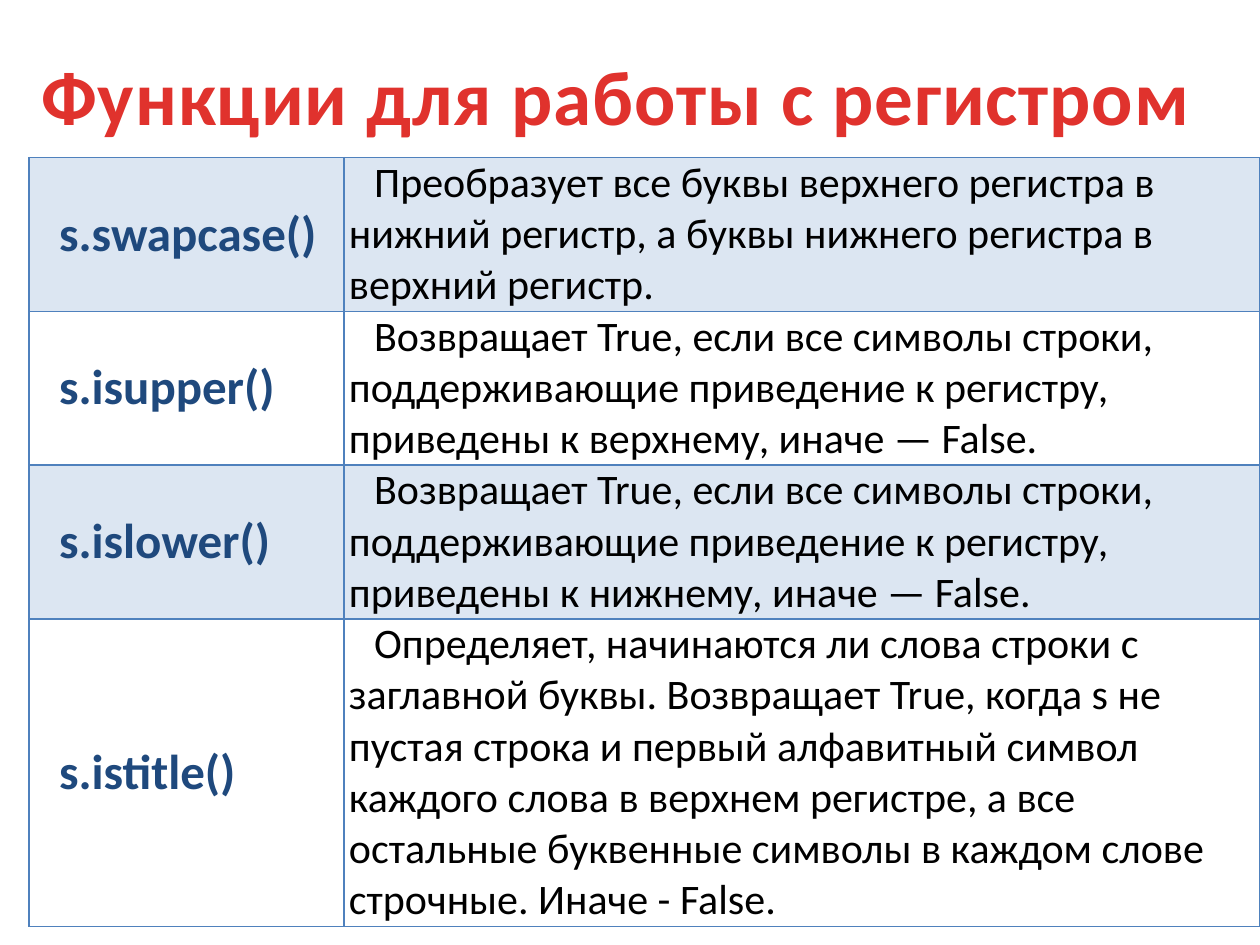
"""Build a slide with a table of Python string case functions."""
from lxml.etree import SubElement
from pptx import Presentation
from pptx.dml.color import RGBColor
from pptx.enum.text import MSO_ANCHOR, MSO_AUTO_SIZE, PP_ALIGN
from pptx.oxml.ns import qn
from pptx.util import Inches, Pt

THEME = {
    "title": {"name": "Calibri", "size": Pt(44), "bold": True, "color": "E0322D"},
    "function": {"name": "Calibri", "size": Pt(28), "bold": True, "color": "1F497D"},
    "meaning": {"name": "Calibri", "size": Pt(24), "bold": False, "color": "000000"},
    "band": "DCE6F2",
    "border": "4F81BD",
}
LEFT, TABLE_TOP = 0.023, 1 / 6
COLUMN_SHARES = (0.25, 1 - LEFT - 0.25)
ROW_SHARE = 0.16
FUNCTIONS = [
    ("s.swapcase()", "Преобразует все буквы верхнего регистра в нижний регистр, "
     "а буквы нижнего регистра в верхний регистр.", 1),
    ("s.isupper()", "Возвращает True, если все символы строки, поддерживающие "
     "приведение к регистру, приведены к верхнему, иначе — False.", 1),
    ("s.islower()", "Возвращает True, если все символы строки, поддерживающие "
     "приведение к регистру, приведены к нижнему, иначе — False.", 1),
    ("s.istitle()", "Определяет, начинаются ли слова строки с заглавной буквы. "
     "Возвращает True, когда s не пустая строка и первый алфавитный символ каждого "
     "слова в верхнем регистре, а все остальные буквенные символы в каждом слове "
     "строчные. Иначе - False.", 2),
]


def write(para, text, style):
    span = para.add_run()
    span.text = text
    for name, value in THEME[style].items():
        if name == "color":
            span.font.color.rgb = RGBColor.from_string(value)
        else:
            setattr(span.font, name, value)
    return span


def add_borders(cell):
    properties = cell._tc.get_or_add_tcPr()
    for position, side in enumerate(("lnL", "lnR", "lnT", "lnB")):
        line = SubElement(properties, qn(f"a:{side}"), w=str(Pt(1)))
        fill = SubElement(line, qn("a:solidFill"))
        SubElement(fill, qn("a:srgbClr"), val=THEME["border"])
        properties.insert(position, line)


deck = Presentation()
deck.slide_width, deck.slide_height = Inches(10), Inches(7.5)
width, height = deck.slide_width, deck.slide_height
page = deck.slides.add_slide(deck.slide_layouts[6])

row_heights = [int(height * ROW_SHARE * units) for _, _, units in FUNCTIONS]
column_widths = [int(width * share) for share in COLUMN_SHARES]
table = page.shapes.add_table(
    len(FUNCTIONS), len(column_widths), int(width * LEFT), int(height * TABLE_TOP),
    sum(column_widths), sum(row_heights)).table
table.first_row = table.horz_banding = False
for column, column_width in zip(table.columns, column_widths):
    column.width = column_width

cell_format = {"margin_left": Inches(0.04), "margin_right": Inches(0.04),
               "margin_top": 0, "margin_bottom": 0}
cell_kinds = (("function", MSO_ANCHOR.MIDDLE), ("meaning", MSO_ANCHOR.TOP))
for row_index, (function, meaning, _) in enumerate(FUNCTIONS):
    table.rows[row_index].height = row_heights[row_index]
    for column_index, text in enumerate((function, meaning)):
        style, anchor = cell_kinds[column_index]
        cell = table.cell(row_index, column_index)
        for name, value in cell_format.items():
            setattr(cell, name, value)
        cell.vertical_anchor = anchor
        if row_index % 2 == 0:
            cell.fill.solid()
            cell.fill.fore_color.rgb = RGBColor.from_string(THEME["band"])
        else:
            cell.fill.background()
        add_borders(cell)
        para = cell.text_frame.paragraphs[0]
        indents = para._p.get_or_add_pPr()
        indents.set("marL", "0")
        indents.set("indent", str(Inches(0.2)))
        write(para, text, style)

title = page.shapes.add_textbox(
    int(width * LEFT), int(height * 0.03), int(width * 0.942), int(height * 0.12))
title.text_frame.word_wrap = False
title.text_frame.auto_size = MSO_AUTO_SIZE.SHAPE_TO_FIT_TEXT
para = title.text_frame.paragraphs[0]
for name, value in {"alignment": PP_ALIGN.JUSTIFY, "line_spacing": 1.15}.items():
    setattr(para, name, value)
span = write(para, "Функции для работы с регистром", "title")
span.font._element.set("spc", "50")

deck.save("out.pptx")
